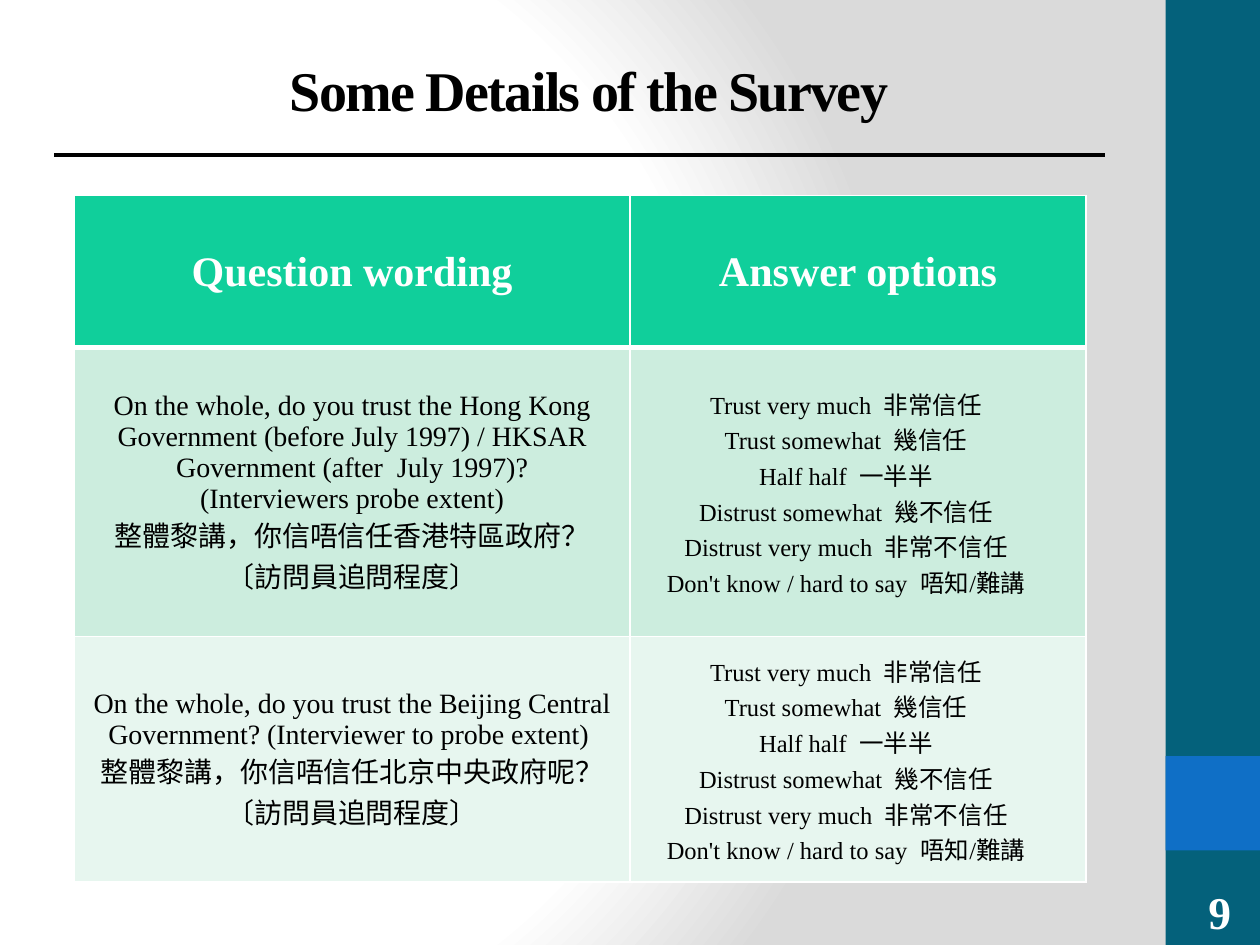
"""Build the survey details slide: a titled table beside a coloured side band."""
from pptx import Presentation
from pptx.dml.color import RGBColor
from pptx.enum.shapes import MSO_CONNECTOR, MSO_SHAPE
from pptx.enum.text import MSO_ANCHOR, MSO_AUTO_SIZE, PP_ALIGN
from pptx.oxml import parse_xml
from pptx.oxml.ns import nsdecls
from pptx.util import Inches, Pt

RECTANGLE = MSO_SHAPE.RECTANGLE
STRAIGHT = MSO_CONNECTOR.STRAIGHT
TOP, MIDDLE, BOTTOM = MSO_ANCHOR.TOP, MSO_ANCHOR.MIDDLE, MSO_ANCHOR.BOTTOM
CENTER = PP_ALIGN.CENTER
NO_AUTOFIT = MSO_AUTO_SIZE.NONE

FONT = "Times New Roman"
BLACK, WHITE = "000000", "FFFFFF"
WIDTH, HEIGHT = 10, 7.5
BAND_WIDTH = 0.75
BAND_LEFT = WIDTH - BAND_WIDTH

TITLE = "Some Details of the Survey"
PAGE_NUMBER = "9"
HEADINGS = ["Question wording", "Answer options"]
QUESTIONS = [
    [
        "On the whole, do you trust the Hong Kong Government (before July 1997) / "
        "HKSAR Government (after  July 1997)?",
        "(Interviewers probe extent)",
        "整體黎講，你信唔信任香港特區政府？",
        "〔訪問員追問程度〕",
    ],
    [
        "On the whole, do you trust the Beijing Central Government? "
        "(Interviewer to probe extent) ",
        "整體黎講，你信唔信任北京中央政府呢？〔訪問員追問程度〕",
    ],
]
ANSWERS = [
    "Trust very much  非常信任",
    "Trust somewhat  幾信任",
    "Half half  一半半",
    "Distrust somewhat  幾不信任",
    "Distrust very much  非常不信任",
    "Don't know / hard to say  唔知/難講",
]
BANDS = [(0, HEIGHT, "04617B"), (0.8 * HEIGHT, BAND_WIDTH, "0F6FC6")]
COLUMN_WIDTHS = [4.41, 3.62]
ROW_HEIGHTS = [1.21, 2.29, 1.95]
ROW_FILLS = ["10CF9B", "CCEDDE", "E7F6EF"]
GRADIENT_STOPS = [(0, WHITE), (75, WHITE), (100, "DADADA")]


def color(value):
    return RGBColor.from_string(value)


def write(frame, lines, size, text_color, bold=False):
    for index, line in enumerate(lines):
        paragraph = frame.paragraphs[0] if index == 0 else frame.add_paragraph()
        paragraph.alignment = CENTER
        run = paragraph.add_run()
        run.text = line
        run.font.name = FONT
        run.font.size = Pt(size)
        run.font.bold = bold
        run.font.color.rgb = color(text_color)


def paint_background(slide):
    slide.background.fill.solid()
    solid = slide.element.xpath("p:cSld/p:bg/p:bgPr/a:solidFill")[0]
    stops = "".join(
        f'<a:gs pos="{position * 1000}"><a:srgbClr val="{value}"/></a:gs>'
        for position, value in GRADIENT_STOPS
    )
    gradient = parse_xml(
        f'<a:gradFill {nsdecls("a")} rotWithShape="1"><a:gsLst>{stops}</a:gsLst>'
        '<a:path path="circle">'
        '<a:fillToRect l="20000" t="50000" r="100000" b="50000"/>'
        "</a:path></a:gradFill>"
    )
    solid.getparent().replace(solid, gradient)


def add_band(slide, top, height, fill):
    shape = slide.shapes.add_shape(
        RECTANGLE, Inches(BAND_LEFT), Inches(top), Inches(BAND_WIDTH), Inches(height)
    )
    shape.shadow.inherit = False
    shape.fill.solid()
    shape.fill.fore_color.rgb = color(fill)
    shape.line.fill.background()


def add_title(slide):
    title = slide.shapes.title
    title.left, title.top = Inches(0.51), Inches(0.36)
    title.width, title.height = Inches(8.33), Inches(0.56)
    frame = title.text_frame
    frame.auto_size = NO_AUTOFIT
    frame.vertical_anchor = TOP
    frame.margin_top = Inches(0.08)
    write(frame, [TITLE], 32, BLACK, bold=True)
    frame.paragraphs[0].runs[0].font._element.set("spc", "-100")


def add_rule(slide):
    rule = slide.shapes.add_connector(
        STRAIGHT, Inches(0.43), Inches(1.23), Inches(8.77), Inches(1.23)
    )
    rule.line.color.rgb = color(BLACK)
    rule.line.width = Pt(2.25)
    rule._element.spPr.append(parse_xml(f'<a:effectLst {nsdecls("a")}/>'))


def add_page_number(slide):
    box = slide.shapes.add_textbox(Inches(9.36), Inches(6.97), Inches(0.64), Inches(0.53))
    box.text_frame.word_wrap = True
    box.text_frame.vertical_anchor = BOTTOM
    write(box.text_frame, [PAGE_NUMBER], 26, WHITE, bold=True)


def style_cell(cell, row, column):
    properties = cell._tc.get_or_add_tcPr()
    widths = {"L": 1, "R": 1, "T": 3 if row == 1 else 1, "B": 3 if row == 0 else 1}
    for side, points in widths.items():
        properties.append(parse_xml(
            f'<a:ln{side} {nsdecls("a")} w="{Pt(points)}"><a:solidFill>'
            f'<a:srgbClr val="{WHITE}"/></a:solidFill></a:ln{side}>'
        ))
    cell.fill.solid()
    cell.fill.fore_color.rgb = color(ROW_FILLS[row])
    cell.vertical_anchor = MIDDLE
    cell.margin_left = cell.margin_top = Inches(0.01)
    cell.margin_right = Inches(0.2 if row and column else 0.01)
    cell.margin_bottom = 0


def add_survey_table(slide):
    rows = [[[heading] for heading in HEADINGS]]
    rows += [[question, ANSWERS] for question in QUESTIONS]
    table = slide.shapes.add_table(
        len(rows), len(HEADINGS), Inches(0.59), Inches(1.55),
        Inches(sum(COLUMN_WIDTHS)), Inches(sum(ROW_HEIGHTS)),
    ).table
    for column, width in zip(table.columns, COLUMN_WIDTHS):
        column.width = Inches(width)
    for row, height in zip(table.rows, ROW_HEIGHTS):
        row.height = Inches(height)
    for row, contents in enumerate(rows):
        for column, lines in enumerate(contents):
            cell = table.cell(row, column)
            style_cell(cell, row, column)
            if row == 0:
                write(cell.text_frame, lines, 24, WHITE, bold=True)
            else:
                write(cell.text_frame, lines, 14 if column else 16, BLACK)


def main():
    presentation = Presentation()
    presentation.slide_width, presentation.slide_height = Inches(WIDTH), Inches(HEIGHT)
    slide = presentation.slides.add_slide(presentation.slide_layouts[5])
    paint_background(slide)
    for top, height, fill in BANDS:
        add_band(slide, top, height, fill)
    add_page_number(slide)
    add_rule(slide)
    add_title(slide)
    add_survey_table(slide)
    presentation.save("out.pptx")


if __name__ == "__main__":
    main()
